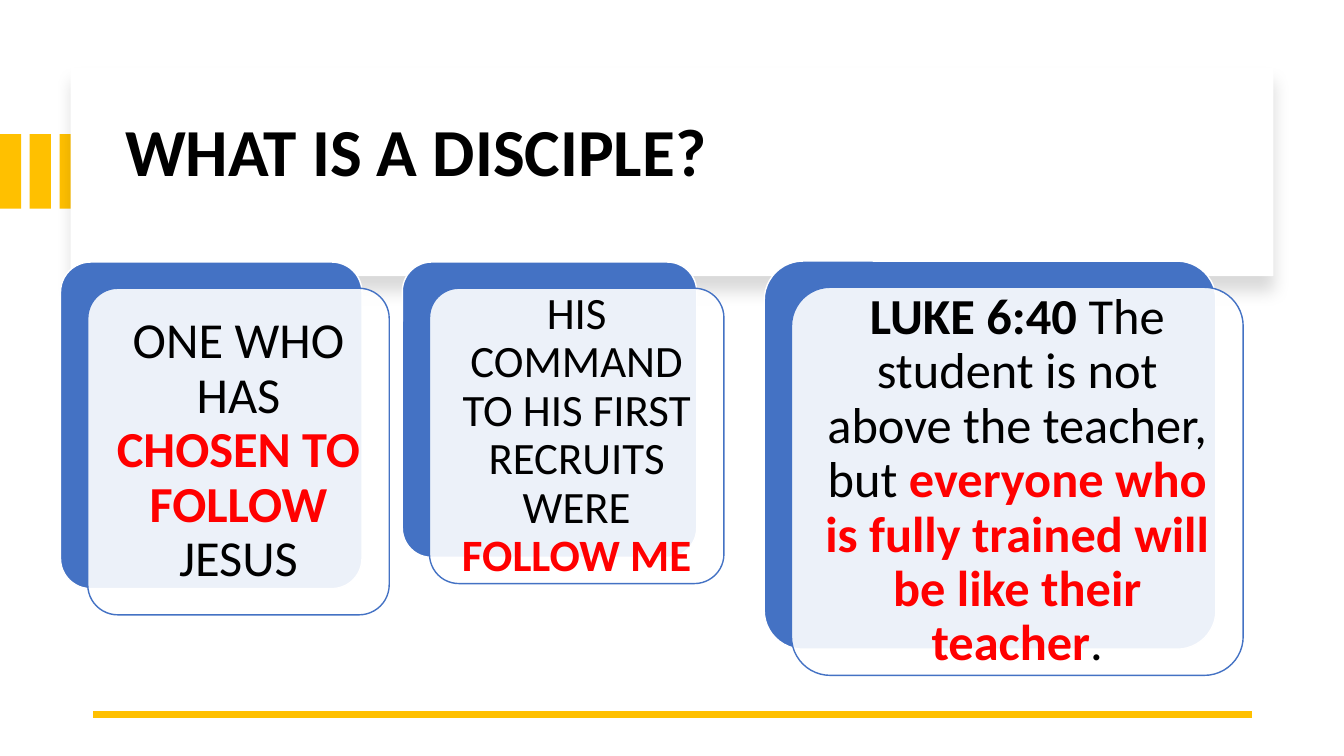
from lxml import etree
from pptx import Presentation
from pptx.dml.color import RGBColor
from pptx.enum.shapes import MSO_CONNECTOR, MSO_SHAPE
from pptx.enum.text import MSO_ANCHOR, MSO_AUTO_SIZE, PP_ALIGN
from pptx.oxml.ns import qn
from pptx.util import Inches, Pt

RECT = MSO_SHAPE.RECTANGLE
ROUNDED = MSO_SHAPE.ROUNDED_RECTANGLE
STRAIGHT = MSO_CONNECTOR.STRAIGHT
MIDDLE = MSO_ANCHOR.MIDDLE
NO_AUTOFIT = MSO_AUTO_SIZE.NONE
LEFT, CENTER = PP_ALIGN.LEFT, PP_ALIGN.CENTER

COLORS = {"white": "FFFFFF", "black": "000000", "gold": "FFC000",
          "blue": "4472C4", "red": "FF0000"}
FONT = "Calibri"
CARD_OFFSET = 0.27


def rgb(name):
    return RGBColor.from_string(COLORS[name])


class SlideBuilder:
    def __init__(self, slide):
        self.slide = slide
        self.shapes = slide.shapes

    def box(self, kind, place, fill, line=None):
        shape = self.shapes.add_shape(kind, *map(Inches, place))
        shape.shadow.inherit = False
        shape.fill.solid()
        shape.fill.fore_color.rgb = rgb(fill)
        if line:
            shape.line.color.rgb = rgb(line)
            shape.line.width = Pt(1)
        else:
            shape.line.fill.background()
        if kind == ROUNDED:
            shape.adjustments[0] = 0.1
        return shape

    def drop_shadow(self, shape, blur, distance, opacity):
        effects = shape._element.spPr.find(qn("a:effectLst"))
        shadow = etree.SubElement(effects, qn("a:outerShdw"), blurRad=str(Pt(blur)),
                                  dist=str(Pt(distance)), dir="5400000",
                                  algn="t", rotWithShape="0")
        color = etree.SubElement(shadow, qn("a:srgbClr"), val=COLORS["black"])
        etree.SubElement(color, qn("a:alpha"), val=str(opacity * 1000))

    def title(self, text, place):
        title = self.shapes.title
        title.left, title.top, title.width, title.height = map(Inches, place)
        # Bring the title in front of its panel
        self.shapes._spTree.append(title._element)
        frame = title.text_frame
        frame.text = text
        frame.auto_size = NO_AUTOFIT
        frame.vertical_anchor = MIDDLE
        heading = frame.paragraphs[0]
        heading.alignment = LEFT
        heading.line_spacing = 0.9
        heading.font.name, heading.font.size = FONT, Pt(48)
        heading.font.bold = True
        heading.font.color.rgb = rgb("black")

    def rule(self, start, end, color, width):
        rule = self.shapes.add_connector(STRAIGHT, *map(Inches, start + end))
        rule.line.color.rgb = rgb(color)
        rule.line.width = Pt(width)
        etree.SubElement(rule._element.spPr, qn("a:effectLst"))

    def card(self, place, size, inset, parts):
        left, top, width, height = place
        self.box(ROUNDED, place, "blue", "white")
        front = self.box(ROUNDED, (left + CARD_OFFSET, top + 0.26, width, height),
                         "white", "blue")
        front_color = front._element.spPr.find(qn("a:solidFill"))[0]
        etree.SubElement(front_color, qn("a:alpha"), val="90000")

        frame = front.text_frame
        frame.word_wrap = True
        frame.vertical_anchor = MIDDLE
        frame.margin_left = frame.margin_right = Inches(inset)
        frame.margin_top = frame.margin_bottom = Inches(inset)
        statement = frame.paragraphs[0]
        statement.alignment = CENTER
        statement.line_spacing = 0.9
        statement.font.name, statement.font.size = FONT, Pt(size)
        for text, color, bold in parts:
            run = statement.add_run()
            run.text = text
            run.font.bold = bold
            run.font.color.rgb = rgb(color)


def main():
    deck = Presentation()
    deck.slide_width, deck.slide_height = Inches(13.33), Inches(7.5)
    builder = SlideBuilder(deck.slides.add_slide(deck.slide_layouts[5]))

    # Gold stripes running under the title panel
    for i in range(3):
        builder.box(RECT, (i * 0.295, 1.33, 0.21, 0.74), "gold")

    # Title panel
    panel = builder.box(RECT, (0.7, 0.67, 11.93, 2.07), "white")
    builder.drop_shadow(panel, blur=11, distance=10, opacity=15)
    builder.title("WHAT IS A DISCIPLE?", (1.14, 0.89, 11.13, 1.3))

    # Footer rule
    builder.rule((12.42, 7.09), (0.92, 7.09), "gold", 4.5)

    # Statement cards
    builder.card((0.6, 2.6, 2.99, 3.24), 36, 0.15, [
        ("ONE WHO HAS ", "black", False),
        ("CHOSEN TO FOLLOW ", "red", True),
        ("JESUS", "black", False)])
    builder.card((3.99, 2.6, 2.92, 2.93), 32, 0.13, [
        ("HIS COMMAND TO HIS FIRST RECRUITS WERE ", "black", False),
        ("FOLLOW ME", "red", True)])
    builder.card((7.58, 2.59, 4.48, 3.85), 36, 0.15, [
        ("LUKE 6:40 ", "black", True),
        ("The student is not above the teacher, but ", "black", False),
        ("everyone who is fully trained will be like their teacher", "red", True),
        (".", "black", False)])

    deck.save("out.pptx")


if __name__ == "__main__":
    main()
